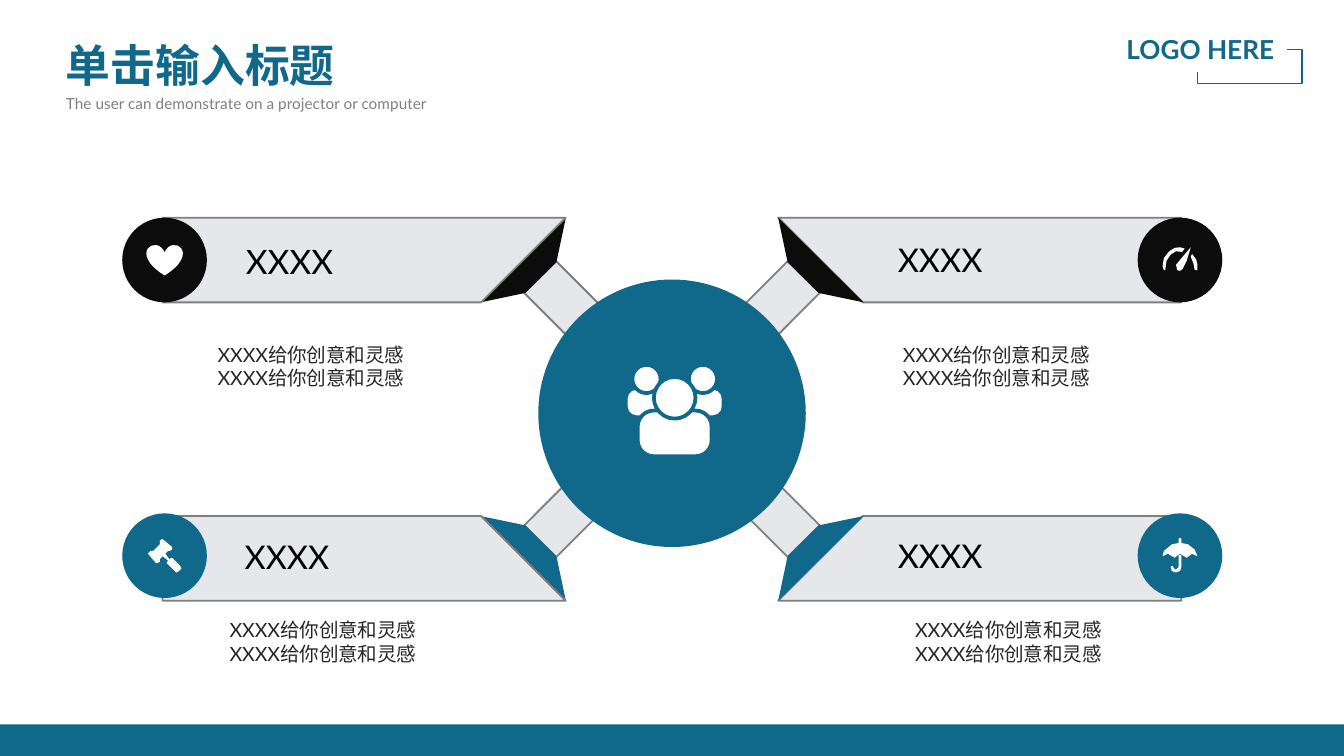
from itertools import product
from lxml import etree
from pptx import Presentation, util as u
from pptx.dml.color import RGBColor
from pptx.enum import shapes, text
from pptx.oxml.ns import qn

theme = dict(font="Lato", teal="10688B", rule="0D678B", black="0C0C0C", pale="E6E7EA",
             edge="7F7F7F", white="FFFFFF", ink="000000", body="262626", grey="808080",
             title=24, logo=14, lead=18, label=17.5, note=10.5, tag=8.25)
kind = shapes.MSO_SHAPE
fit = text.MSO_AUTO_SIZE

deck = Presentation()
deck.slide_width = u.Inches(10)
deck.slide_height = deck.slide_width * 9 // 16
cell = deck.slide_width / 100
page = deck.slides.add_slide(deck.slide_layouts[0])


def cast(form, box=None, fill="teal", edge=None, width=1, bend=None):
    if isinstance(form, list):
        dots = [(round(x * cell), round(y * cell)) for x, y in form]
        pen = page.shapes.build_freeform(*dots[0], scale=1.0)
        pen.add_line_segments(dots[1:], close=True)
        item = pen.convert_to_shape()
    else:
        item = page.shapes.add_shape(form, *[round(n * cell) for n in box])
    item.shadow.inherit = False
    if bend is not None:
        item.adjustments[0] = bend
    item.fill.solid()
    item.fill.fore_color.rgb = RGBColor.from_string(theme[fill])
    if edge:
        item.line.color.rgb = RGBColor.from_string(theme[edge])
        item.line.width = u.Pt(width)
    else:
        item.line.fill.background()


def say(words, box, size, hue, bold=False, align="LEFT", wrap=True, pad=True,
        grow=True, lead=None, item=None):
    spot = [round(n * cell) for n in box]
    if item is None:
        item = page.shapes.add_textbox(*spot)
    else:
        item.left, item.top, item.width, item.height = spot
    frame = item.text_frame
    frame.text = words
    frame.word_wrap = wrap
    frame.auto_size = fit.SHAPE_TO_FIT_TEXT if grow else fit.NONE
    frame.vertical_anchor = text.MSO_ANCHOR.TOP if pad else text.MSO_ANCHOR.MIDDLE
    if not pad:
        frame.margin_left = frame.margin_right = frame.margin_top = frame.margin_bottom = 0
    line = frame.paragraphs[0]
    line.alignment = text.PP_ALIGN[align]
    line.space_before = u.Pt(0)
    if lead:
        line.line_spacing = lead
    line.font.name = theme["font"]
    line.font.size = u.Pt(theme[size])
    line.font.bold = bold
    line.font.color.rgb = RGBColor.from_string(theme[hue])


say("单击输入标题", (3.9, 2.3, 22.3, 5), "title", "teal", bold=True, wrap=False,
    item=page.shapes.title)
say("The user can demonstrate on a projector or computer", (3.9, 6.3, 53.8, 2.5),
    "tag", "grey", lead=1.14, item=page.placeholders[1])

midx, midy = 50, 30.45
panel = [(37.9, 14.25), (7.9, 14.25), (14.2, 7.95), (37.9, 7.95)]
arm = [(8.6, 11), (11, 8.65), (7.75, 5.4), (8, 4.9), (3.9, 4), (4.9, 8), (5.3, 7.7)]
fold = [(8.6, 10.95), (7.9, 14.25), (14.25, 7.95), (10.9, 8.65)]
for side, row in product((1, -1), (-1, 1)):
    tone = "black" if row < 0 else "teal"
    parts = [(arm, "pale", "edge"), (fold, tone, None)]
    parts.insert(0 if side > 0 else 2, (panel, "pale", "edge"))
    for form, fill, edge in parts:
        cast([(midx + side * x, midy + row * y) for x, y in form], fill=fill, edge=edge)
    top = 16.2 if row < 0 else 38.2
    cast(kind.OVAL, (9.1 if side < 0 else 84.65, top, 6.3, 6.3), tone)
    say("XXXX给你创意和灵感XXXX给你创意和灵感",
        ((15.2 if side < 0 else 66.2) + (row > 0) * 0.9, 25 if row < 0 else 45.5, 16.8, 4.5),
        "note", "body")

for box, size in (((18.3, 17.7, 15.7, 3.4), "lead"), ((66.8, 17.4, 15.5, 3.8), "label"),
                  ((18.2, 39.5, 12.3, 3.8), "label"), ((66.8, 39.4, 15.5, 3.8), "label")):
    say("XXXX", box, size, "ink", wrap=False, pad=False, grow=False)

cast(kind.OVAL, (40.05, 20.8, 19.9, 19.9))
for form, box, edge, bend in (
        (kind.ROUNDED_RECTANGLE, (46.7, 29, 2.8, 1.9), None, 0.35),
        (kind.ROUNDED_RECTANGLE, (50.9, 29, 2.8, 1.9), None, 0.35),
        (kind.OVAL, (47.05, 27.15, 2.1, 2.1), "teal", None),
        (kind.OVAL, (51.25, 27.15, 2.1, 2.1), "teal", None),
        (kind.ROUNDED_RECTANGLE, (47.45, 30.55, 5.5, 3.4), "teal", 0.35),
        (kind.OVAL, (48.65, 28.05, 3.1, 3.1), "teal", None)):
    cast(form, box, "white", edge, 2, bend)

cast(kind.HEART, (10.9, 18.2, 2.7, 2.3), "white")

gavel = [
    (12.9, 41.6), (12.8, 41.5), (12.6, 41.6), (12.3, 41.2), (12.5, 41), (12.6, 41),
    (12.8, 40.9), (12.8, 40.7), (12.2, 40.2), (12.1, 40.1), (11.9, 40.2), (11.9, 40.4),
    (11.9, 40.5), (11.4, 41), (11.2, 41), (11, 41.2), (11.1, 41.3), (11.6, 41.9),
    (11.7, 41.9), (11.9, 41.8), (11.9, 41.6), (12.1, 41.4), (12.5, 41.7), (12.4, 41.9),
    (12.5, 42), (13, 42.5), (13.1, 42.6), (13.3, 42.5), (13.5, 42.3), (13.4, 42.1)]
gauge = [
    [(86.6, 20.1), (86.5, 19.8), (86.6, 19.2), (87, 18.7), (87.4, 18.45), (87.8, 18.4),
     (88.15, 18.5), (87.95, 18.75), (87.5, 18.7), (87.1, 18.95), (86.8, 19.4), (86.7, 20.1)],
    [(88.7, 18.9), (89, 19.3), (89.1, 19.7), (89.1, 20.1), (88.9, 20.1), (88.8, 19.6),
     (88.6, 19.1)],
    [(88.6, 18.4), (88.3, 19.4), (88, 20), (87.8, 20.15), (87.6, 20.1), (87.5, 19.7),
     (88, 19.1)]]
brolly = [
    [(86.5, 41.4), (86.6, 41), (87.2, 40.5), (87.7, 40.4), (87.7, 40.1), (87.8, 40),
     (87.9, 40.1), (87.9, 40.4), (88.4, 40.5), (88.9, 40.9), (89.1, 41.4), (88.7, 41.2),
     (88.3, 41.5), (87.8, 41.2), (87.4, 41.5), (86.9, 41.2)],
    [(87.7, 41.3), (87.9, 41.3), (87.9, 42.2), (87.8, 42.5), (87.5, 42.6), (87.2, 42.5),
     (87.1, 42.2), (87.25, 42.1), (87.35, 42.3), (87.5, 42.4), (87.7, 42.2)]]
for form in [gavel] + gauge + brolly:
    cast(form, fill="white")

say("LOGO HERE", (82.4, 2, 13.4, 3.4), "logo", "teal", bold=True, align="RIGHT")
hook = page.shapes.add_connector(shapes.MSO_CONNECTOR.ELBOW,
                                 *[round(n * cell) for n in (93.3, 7.9, 91.6, 1.2)])
hook.line.color.rgb = RGBColor.from_string(theme["rule"])
hook.line.width = u.Pt(0.75)
props = hook._element.spPr
etree.SubElement(props, qn("a:effectLst"))
props.find(qn("a:xfrm")).set("rot", "5400000")
geom = props.find(qn("a:prstGeom"))
geom.set("prst", "bentConnector4")
for name, value in (("adj1", -49500), ("adj2", 116200)):
    etree.SubElement(geom.find(qn("a:avLst")), qn("a:gd"), name=name, fmla=f"val {value}")

cast(kind.RECTANGLE, (0, 53.9, 100, 2.6))
deck.save("out.pptx")
